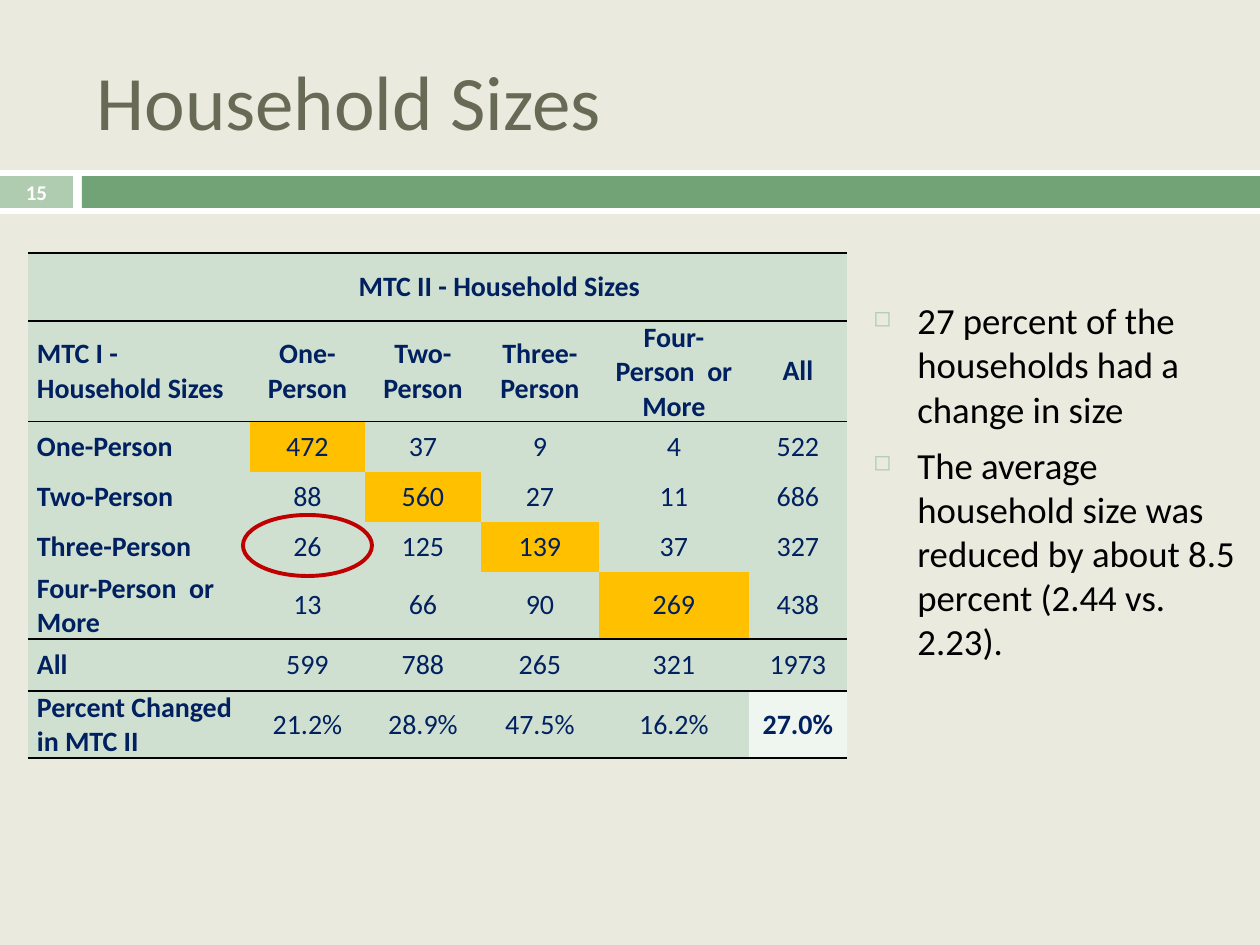
from dataclasses import dataclass

from lxml.etree import SubElement
from pptx import Presentation
from pptx.dml.color import RGBColor
from pptx.enum.shapes import MSO_SHAPE
from pptx.enum.text import MSO_ANCHOR, PP_ALIGN
from pptx.oxml.ns import qn
from pptx.util import Emu, Pt

PX_PER_INCH = 126
FONT = "Calibri"
BACKGROUND = RGBColor(0xEA, 0xEB, 0xDE)
WHITE = RGBColor(0xFF, 0xFF, 0xFF)
BLACK = RGBColor(0, 0, 0)
PALE_GREEN = RGBColor(0xB0, 0xCC, 0xB0)
GREEN = RGBColor(0x72, 0xA3, 0x76)
OLIVE = RGBColor(0x67, 0x6A, 0x55)
NAVY = RGBColor(0, 0x20, 0x60)
CELL_GREEN = RGBColor(0xD0, 0xE0, 0xD0)
CELL_LIGHT = RGBColor(0xEF, 0xF5, 0xEF)
AMBER = RGBColor(0xFF, 0xC0, 0)
RED = RGBColor(0xC0, 0, 0)


@dataclass(frozen=True)
class Box:
    left: int
    top: int
    width: int
    height: int

    def emu(self) -> tuple[Emu, Emu, Emu, Emu]:
        return px(self.left), px(self.top), px(self.width), px(self.height)


@dataclass(frozen=True)
class Band:
    box: Box
    color: RGBColor


BANDS = [
    Band(Box(0, 170, 1260, 44), WHITE),
    Band(Box(0, 176, 73, 32), PALE_GREEN),
    Band(Box(82, 176, 1178, 32), GREEN),
]
TITLE_BOX = Box(84, 32, 1124, 136)
NUMBER_BOX = Box(0, 175, 73, 34)
BULLET_BOX = Box(861, 292, 399, 415)
TABLE_BOX = Box(28, 253, 819, 505)
CIRCLE_BOX = Box(243, 515, 129, 61)

BULLETS = [
    "27 percent of the households had a change in size",
    "The average household size was reduced by about 8.5 percent (2.44 vs. 2.23).",
]
COLUMN_WIDTHS = [222, 115, 116, 118, 150, 98]
ROW_HEIGHTS = [68, 83, 50, 50, 50, 50, 52, 57]
ROWS = [
    ["", "MTC II - Household Sizes", "", "", "", ""],
    ["MTC I - Household Sizes", "One-Person", "Two-Person", "Three-Person",
     "Four-Person  or More", "All"],
    ["One-Person", "472", "37", "9", "4", "522"],
    ["Two-Person", "88", "560", "27", "11", "686"],
    ["Three-Person", "26", "125", "139", "37", "327"],
    ["Four-Person  or More", "13", "66", "90", "269", "438"],
    ["All", "599", "788", "265", "321", "1973"],
    ["Percent Changed in MTC II", "21.2%", "28.9%", "47.5%", "16.2%", "27.0%"],
]
HEADER_ROWS = 2
SIZE_COUNT = 4
RULED_EDGES = {0, 1, 2, 6, 7, 8}  # row edges that carry a line, from the top
TOTAL_CELL = (7, 5)


def px(length: int) -> Emu:
    return Emu(round(length * 914400 / PX_PER_INCH))


def format_text(paragraph, size: float, color: RGBColor, bold: bool = False,
                align=PP_ALIGN.LEFT) -> None:
    paragraph.alignment = align
    for run in paragraph.runs:
        run.font.name = FONT
        run.font.size = Pt(size)
        run.font.bold = bold
        run.font.color.rgb = color


def add_band(slide, band: Band) -> None:
    shape = slide.shapes.add_shape(MSO_SHAPE.RECTANGLE, *band.box.emu())
    shape.shadow.inherit = False
    shape.fill.solid()
    shape.fill.fore_color.rgb = band.color
    shape.line.fill.background()


def add_title(slide) -> None:
    title = slide.shapes.title
    title.left, title.top, title.width, title.height = TITLE_BOX.emu()
    title.text_frame.text = "Household Sizes"
    title.text_frame.vertical_anchor = MSO_ANCHOR.MIDDLE
    format_text(title.text_frame.paragraphs[0], 44, OLIVE)


def add_slide_number(slide) -> None:
    frame = slide.shapes.add_textbox(*NUMBER_BOX.emu()).text_frame
    frame.word_wrap = True
    frame.vertical_anchor = MSO_ANCHOR.MIDDLE
    frame.text = "15"
    format_text(frame.paragraphs[0], 12, WHITE, True, PP_ALIGN.CENTER)


def set_bullet(paragraph) -> None:
    properties = paragraph._p.get_or_add_pPr()
    properties.set("marL", str(px(44)))
    properties.set("indent", str(-px(44)))
    color = SubElement(properties, qn("a:buClr"))
    SubElement(color, qn("a:srgbClr"), val=str(PALE_GREEN))
    SubElement(properties, qn("a:buSzPct"), val="60000")
    SubElement(properties, qn("a:buChar"), char="◻")


def add_bullets(slide) -> None:
    frame = slide.shapes.add_textbox(*BULLET_BOX.emu()).text_frame
    frame.word_wrap = True
    for index, text in enumerate(BULLETS):
        paragraph = frame.add_paragraph() if index else frame.paragraphs[0]
        paragraph.text = text
        set_bullet(paragraph)
        format_text(paragraph, 21, BLACK)
        if index:
            paragraph.space_before = Pt(7)


def set_borders(cell, row: int) -> None:
    """Line the ruled top and bottom edges and clear every other border."""
    ruled = {"L": False, "R": False,
             "T": row in RULED_EDGES, "B": row + 1 in RULED_EDGES}
    properties = cell._tc.get_or_add_tcPr()
    for side, visible in ruled.items():
        line = SubElement(properties, qn(f"a:ln{side}"), w=str(Pt(1)))
        if visible:
            fill = SubElement(line, qn("a:solidFill"))
            SubElement(fill, qn("a:srgbClr"), val=str(BLACK))
        else:
            SubElement(line, qn("a:noFill"))


def cell_color(row: int, column: int) -> RGBColor:
    if (row, column) == TOTAL_CELL:
        return CELL_LIGHT
    unchanged = 1 <= column <= SIZE_COUNT and row - HEADER_ROWS == column - 1
    return AMBER if unchanged else CELL_GREEN


def fill_cell(cell, row: int, column: int, text: str) -> None:
    set_borders(cell, row)
    cell.fill.solid()
    cell.fill.fore_color.rgb = cell_color(row, column)
    cell.vertical_anchor = MSO_ANCHOR.MIDDLE
    cell.margin_left = cell.margin_right = px(9)
    cell.margin_top = cell.margin_bottom = 0
    if text:
        cell.text_frame.text = text
        bold = row < HEADER_ROWS or column == 0 or (row, column) == TOTAL_CELL
        align = PP_ALIGN.CENTER if column else PP_ALIGN.LEFT
        format_text(cell.text_frame.paragraphs[0], 16, NAVY, bold, align)


def add_size_table(slide) -> None:
    frame = slide.shapes.add_table(len(ROWS), len(COLUMN_WIDTHS), *TABLE_BOX.emu())
    table = frame.table
    for column, width in zip(table.columns, COLUMN_WIDTHS):
        column.width = px(width)
    for row, height in zip(table.rows, ROW_HEIGHTS):
        row.height = px(height)
    for row, texts in enumerate(ROWS):
        for column, text in enumerate(texts):
            fill_cell(table.cell(row, column), row, column, text)
    table.cell(0, 1).merge(table.cell(0, SIZE_COUNT))


def add_circle(slide) -> None:
    circle = slide.shapes.add_shape(MSO_SHAPE.OVAL, *CIRCLE_BOX.emu())
    circle.shadow.inherit = False
    circle.fill.background()
    circle.line.color.rgb = RED
    circle.line.width = Pt(2.25)


def main() -> None:
    presentation = Presentation()
    presentation.slide_width, presentation.slide_height = px(1260), px(945)
    slide = presentation.slides.add_slide(presentation.slide_layouts[5])
    slide.background.fill.solid()
    slide.background.fill.fore_color.rgb = BACKGROUND
    for band in BANDS:
        add_band(slide, band)
    add_title(slide)
    add_slide_number(slide)
    add_bullets(slide)
    add_size_table(slide)
    add_circle(slide)
    presentation.save("out.pptx")


if __name__ == "__main__":
    main()
